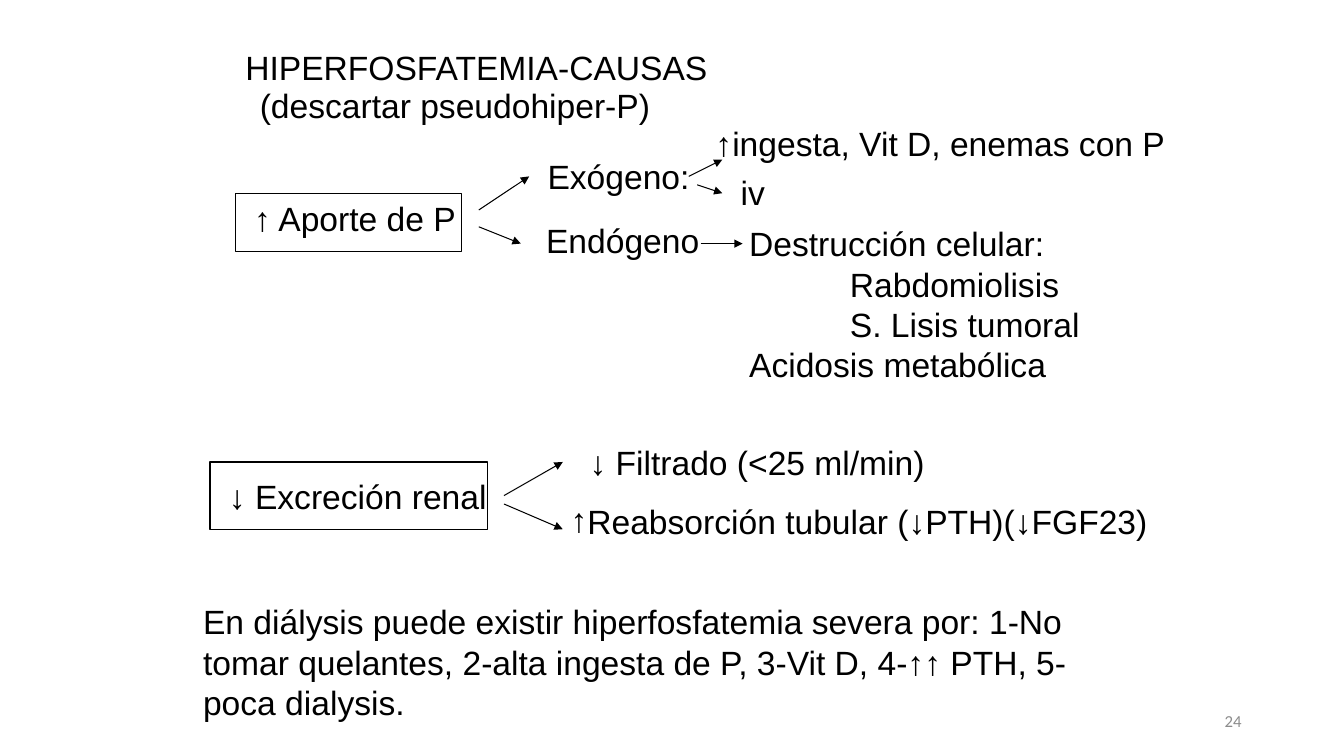
"""Build the slide on the causes of hyperphosphataemia."""
from lxml import etree
from pptx import Presentation
from pptx.dml.color import RGBColor
from pptx.enum import shapes, text
from pptx.oxml import ns
from pptx.util import Pt

BLACK, GREY = "000000", "8C8C8C"
TITLE = ("HIPERFOSFATEMIA-CAUSAS", (168, 30, 402, 36))
LABELS = [
    ("(descartar pseudohiper-P)", (178.5, 57, 294, 36)),
    ("Exógeno:", (384, 108, 120, 36)),
    ("Endógeno", (383, 153.5, 130, 36)),
    ("↑ingesta, Vit D, enemas con P", (504, 84, 338.5, 36)),
    ("iv", (522, 119.5, 44, 36)),
    ("↓ Filtrado (<25 ml/min)", (414, 312, 312, 36)),
    ("En diálysis puede existir hiperfosfatemia severa por: 1-No tomar quelantes, "
     "2-alta ingesta de P, 3-Vit D, 4-↑↑ PTH, 5-poca dialysis.", (138, 426, 678, 94)),
]
ENDOGENOUS = [("Destrucción celular:", 0), ("Rabdomiolisis", 72),
              ("S. Lisis tumoral", 72), ("Acidosis metabólica", 0)]
ENDOGENOUS_BOX = (528, 156, 336, 124)
REABSORPTION = ("Reabsorción tubular (↓PTH)(↓FGF23)", "↑", (400.5, 354, 443.5, 36))
CAUSES = [("↑ Aporte de P", (168, 138, 162, 42), 3.6),
          ("↓ Excreción renal", (150, 330, 198, 48), 9.6)]
ARROWS = [
    (342, 150, 378, 126), (342, 162, 372, 174),
    (492, 126, 516, 114), (498, 132, 516, 138), (500.5, 174, 530.5, 174),
    (360, 354, 402, 330), (360, 360, 402, 378),
]
NUMBER = ("24", (678, 500.5, 216, 28.5))


def color(value):
    return RGBColor.from_string(value)


def points(values):
    return [Pt(v) for v in values]


def write(s, lines, size=24, font="Arial", fill=BLACK, align=text.PP_ALIGN.LEFT, **frame):
    tf = s.text_frame
    settings = {"word_wrap": True, "auto_size": text.MSO_AUTO_SIZE.NONE,
                "vertical_anchor": text.MSO_ANCHOR.TOP, **frame}
    for name, value in settings.items():
        setattr(tf, name, value)
    for i, line in enumerate(lines):
        p = tf.add_paragraph() if i else tf.paragraphs[0]
        p.alignment = align
        r = p.add_run()
        r.text = line
        for name, value in {"size": Pt(size), "name": font}.items():
            setattr(r.font, name, value)
        r.font.color.rgb = color(fill)
    return tf.paragraphs


def add_label(slide, lines, box, **style):
    return write(slide.shapes.add_textbox(*points(box)), lines, **style)


def add_cause(slide, label, box, top):
    s = slide.shapes.add_shape(shapes.MSO_SHAPE.RECTANGLE, *points(box))
    s.shadow.inherit = False
    s.fill.background()
    s.line.color.rgb = color(BLACK)
    s.line.width = Pt(0.75)
    write(s, [label], margin_left=Pt(13.5), margin_right=0, margin_top=Pt(top))


def add_arrow(slide, ends):
    c = slide.shapes.add_connector(shapes.MSO_CONNECTOR.STRAIGHT, *points(ends))
    c.line.color.rgb = color(BLACK)
    c.line.width = Pt(0.75)
    etree.SubElement(c.line._get_or_add_ln(), ns.qn("a:tailEnd"), type="triangle")
    etree.SubElement(c._element.spPr, ns.qn("a:effectLst"))


def main():
    prs = Presentation()
    prs.slide_width, prs.slide_height = Pt(960), Pt(540)
    slide = prs.slides.add_slide(prs.slide_layouts[5])

    title = slide.shapes.title
    title.left, title.top, title.width, title.height = points(TITLE[1])
    write(title, [TITLE[0]])

    for label, box in LABELS:
        add_label(slide, [label], box)

    paragraphs = add_label(slide, [line for line, _ in ENDOGENOUS], ENDOGENOUS_BOX)
    for p, (_, indent) in zip(paragraphs, ENDOGENOUS):
        p._p.get_or_add_pPr().set("marL", str(Pt(indent)))

    label, bullet, box = REABSORPTION
    pPr = add_label(slide, [label], box)[0]._p.get_or_add_pPr()
    etree.SubElement(pPr, ns.qn("a:buFont"), typeface="Arial")
    etree.SubElement(pPr, ns.qn("a:buChar"), char=bullet)

    for cause in CAUSES:
        add_cause(slide, *cause)
    for ends in ARROWS:
        add_arrow(slide, ends)

    add_label(slide, [NUMBER[0]], NUMBER[1], size=12, font="Calibri", fill=GREY,
              align=text.PP_ALIGN.RIGHT, vertical_anchor=text.MSO_ANCHOR.MIDDLE)
    prs.save("out.pptx")


if __name__ == "__main__":
    main()
